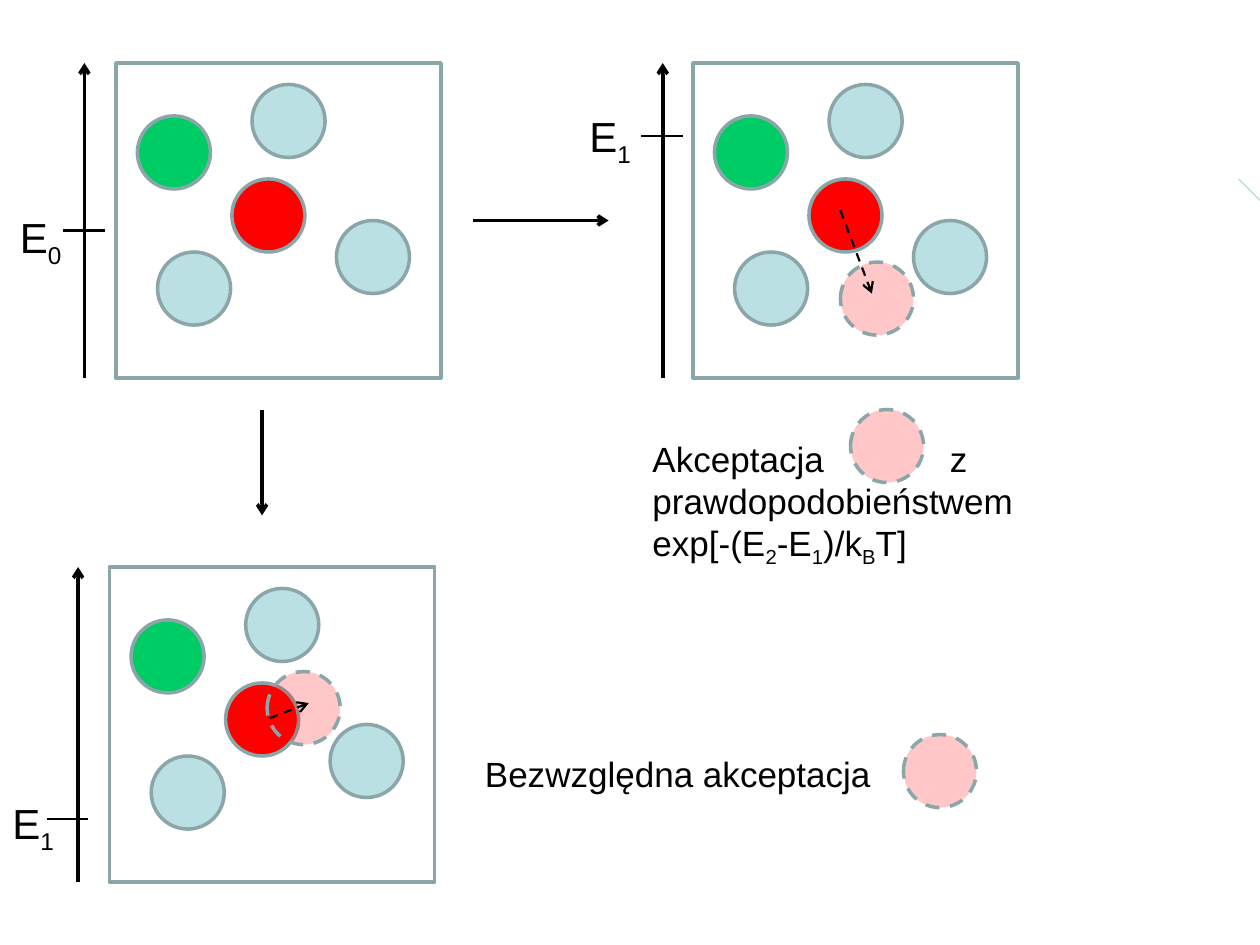
from typing import NamedTuple

from pptx import Presentation
from pptx.dml.color import RGBColor as Rgb
from pptx.enum.dml import MSO_LINE as Dash
from pptx.enum.shapes import MSO_CONNECTOR as Conn, MSO_SHAPE as Kind
from pptx.enum.text import MSO_AUTO_SIZE as Fit
from pptx.oxml.ns import qn
from pptx.oxml.xmlchemy import OxmlElement as Tag
from pptx.util import Inches, Pt

BLUE, GREEN, RED = "BBE0E3", "00CC66", "FF0000"
GRAY, BLACK, PALE = "8AA6A8", "000000", "B6DCDF"
SIZE = 0.58


class Ball(NamedTuple):
    x: float
    y: float
    fill: str


class Scene(NamedTuple):
    x: float
    y: float
    axis: float
    tick: float
    mark: float
    name: str
    left: float
    top: float


class Move(NamedTuple):
    x: float
    y: float
    start: tuple[float, float]
    end: tuple[float, float]


BALLS = [
    Ball(0.92, 0.92, RED),
    Ball(1.08, 0.17, BLUE),
    Ball(1.75, 1.25, BLUE),
    Ball(0.33, 1.5, BLUE),
    Ball(0.17, 0.42, GREEN),
]
SCENES = [
    Scene(0.92, 0.5, 0.67, 0.5, 1.83, "E_0", 0.06, 1.63),
    Scene(5.5, 0.5, 5.26, 5.09, 1.08, "E_1", 4.58, 0.83),
    Scene(0.87, 4.5, 0.62, 0.37, 6.5, "E_1", 0, 6.28),
]
MOVES = [
    Move(6.67, 2.08, (6.67, 1.67), (6.92, 2.33)),
    Move(2.12, 5.33, (2.14, 5.7), (2.45, 5.58)),
]
GHOSTS = [(6.75, 3.25), (7.17, 5.83)]
ARROWS = [((3.75, 1.75), (4.83, 1.75)), ((2.08, 3.25), (2.08, 4.09))]


def paint(code: str) -> Rgb:
    return Rgb.from_string(code)


def apply(item, vals: dict) -> None:
    for key, val in vals.items():
        setattr(item, key, val)


def form(kind, x: float, y: float, w: float, h: float, fill: str = "", ghost: bool = False) -> None:
    item = shapes.add_shape(kind, *map(Inches, (x, y, w, h)))
    item.shadow.inherit = False
    if fill:
        item.fill.solid()
        item.fill.fore_color.rgb = paint(fill)
    else:
        item.fill.background()
    item.line.color.rgb = paint(GRAY)
    item.line.width = Pt(2)
    if ghost:
        item.line.dash_style = Dash.DASH
        alpha = Tag("a:alpha")
        alpha.set("val", "22000")
        item._element.spPr.find(qn("a:solidFill"))[0].append(alpha)


def disc(x: float, y: float, fill: str = RED, ghost: bool = False) -> None:
    form(Kind.OVAL, x, y, SIZE, SIZE, fill, ghost)


def line(start: tuple, end: tuple, width: float = 2, color: str = BLACK,
         head: bool = True, dash: bool = False) -> None:
    item = shapes.add_connector(Conn.STRAIGHT, *map(Inches, start + end))
    item.line.color.rgb = paint(color)
    item.line.width = Pt(width)
    if dash:
        item.line.dash_style = Dash.DASH
    if head:
        tip = Tag("a:tailEnd")
        tip.set("type", "arrow")
        item.line._get_or_add_ln().append(tip)
    item._element.spPr.append(Tag("a:effectLst"))


def text(x: float, y: float, w: float, h: float, size: int, rows: list[str], stop: float = 0) -> None:
    frame = shapes.add_textbox(*map(Inches, (x, y, w, h))).text_frame
    apply(frame, {"word_wrap": True, "auto_size": Fit.SHAPE_TO_FIT_TEXT})
    for i, row in enumerate(rows):
        para = frame.add_paragraph() if i else frame.paragraphs[0]
        if "\t" in row:
            tabs, tab = Tag("a:tabLst"), Tag("a:tab")
            tab.set("pos", str(Inches(stop)))
            tab.set("algn", "l")
            tabs.append(tab)
            para._p.get_or_add_pPr().append(tabs)
        first, *rest = row.split("_")
        parts = [(first, False)]
        for part in rest:
            parts += [(part[0], True), (part[1:], False)]
        for word, low in parts:
            if not word:
                continue
            run = para.add_run()
            run.text = word
            apply(run.font, {"name": "Arial", "size": Pt(size)})
            run.font.color.rgb = paint(BLACK)
            if low:
                run.font._element.set("baseline", "-25000")


def draw(scene: Scene) -> None:
    for ball in BALLS:
        disc(scene.x + ball.x, scene.y + ball.y, ball.fill)
    form(Kind.RECTANGLE, scene.x, scene.y, 2.58, 2.5)
    line((scene.axis, scene.y + 2.5), (scene.axis, scene.y))
    line((scene.tick, scene.mark), (scene.tick + 0.33, scene.mark), 1.5, head=False)
    text(scene.left, scene.top, SIZE, 0.51, 24, [scene.name])


deck = Presentation()
apply(deck, {"slide_width": Inches(10), "slide_height": Inches(7.5)})
shapes = deck.slides.add_slide(deck.slide_layouts[6]).shapes

for scene in SCENES:
    draw(scene)
for move in MOVES:
    disc(move.x, move.y, ghost=True)
    line(move.start, move.end, 1.25, dash=True)
for start, end in ARROWS:
    line(start, end)
line((9.83, 1.42), (10, 1.59), 0.75, PALE, head=False)

text(5.08, 3.42, 4.42, 1.11, 20,
     ["Akceptacja\tz prawdopodobieństwem", "exp[-(E_2-E_1)/k_BT]"], 2.36)
text(3.75, 5.92, 4.42, 0.44, 20, ["Bezwzględna akceptacja"])
for x, y in GHOSTS:
    disc(x, y, ghost=True)

deck.save("out.pptx")
